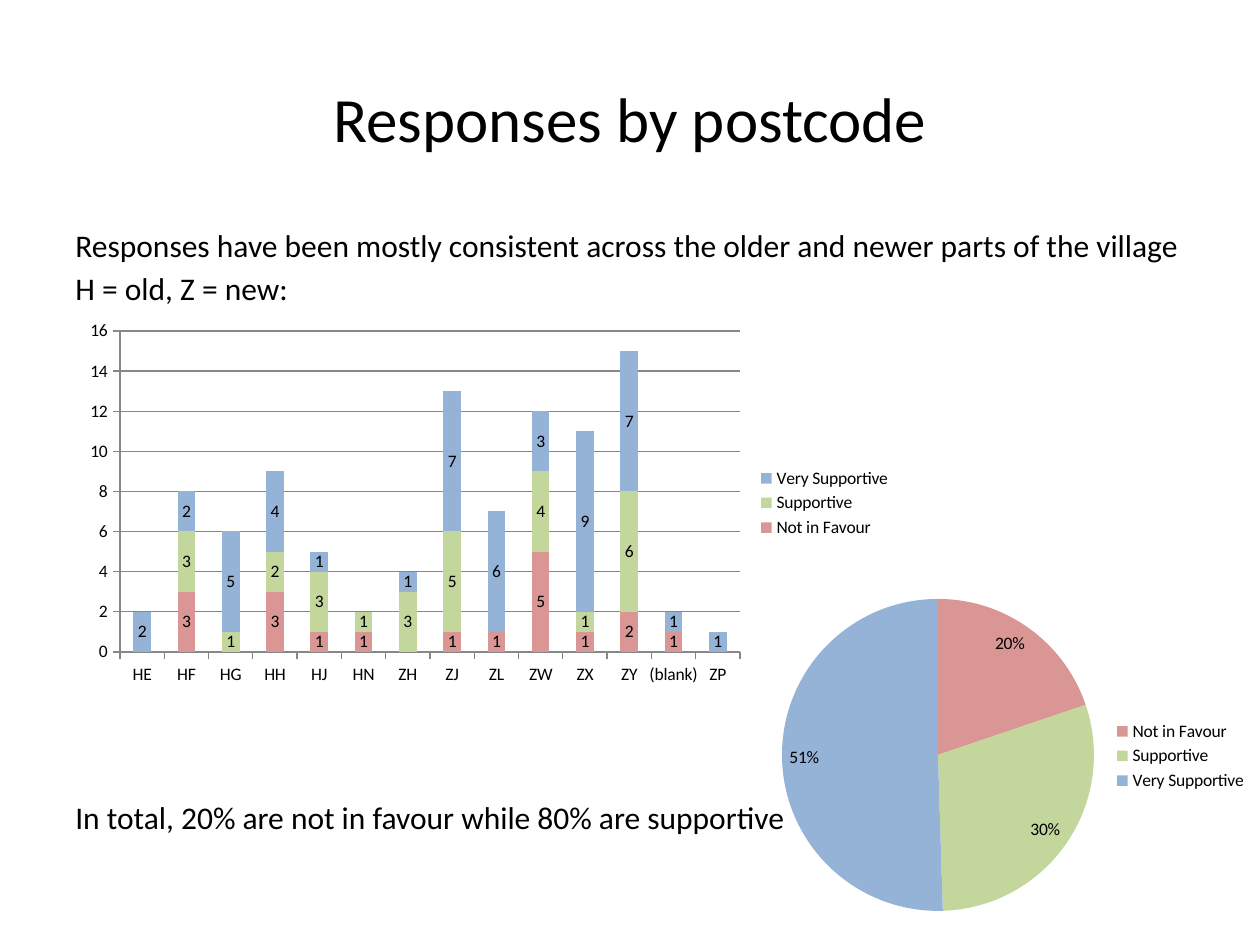
from dataclasses import dataclass

from lxml import etree
from pptx import Presentation, util as u
from pptx.chart.data import CategoryChartData
from pptx.dml.color import RGBColor
from pptx.enum import chart as ch, text
from pptx.oxml.ns import qn

EMU_PER_PX = 914400 / 126


@dataclass(frozen=True)
class Theme:
    font: str = "Calibri"
    ink: str = "000000"
    grid: str = "878787"
    against: str = "D99694"
    support: str = "C3D69B"
    strong: str = "95B3D7"
    title: int = 36
    body: int = 18
    chart: int = 10


@dataclass(frozen=True)
class Box:
    x: int
    y: int
    w: int
    h: int

    def emu(self) -> tuple:
        return tuple(px(v) for v in (self.x, self.y, self.w, self.h))


@dataclass(frozen=True)
class TextBlock:
    box: Box
    lines: tuple
    size: int
    align: text.PP_ALIGN = text.PP_ALIGN.LEFT
    anchor: text.MSO_ANCHOR = text.MSO_ANCHOR.TOP
    before: int = 3


@dataclass(frozen=True)
class Answer:
    name: str
    color: str
    counts: tuple
    percent: int


@dataclass(frozen=True)
class ChartSpec:
    kind: ch.XL_CHART_TYPE
    box: Box
    plot: Box


T = Theme()

TEXTS = (
    TextBlock(Box(63, 38, 1134, 158), ("Responses by postcode",), T.title,
              text.PP_ALIGN.CENTER, text.MSO_ANCHOR.MIDDLE, 0),
    TextBlock(Box(63, 220, 1134, 100),
              ("Responses have been mostly consistent across the older and newer parts of the village",
               "H = old, Z = new:"), T.body),
    TextBlock(Box(63, 792, 1134, 52),
              ("In total, 20% are not in favour while 80% are supportive",), T.body),
)

POSTCODES = ("HE", "HF", "HG", "HH", "HJ", "HN", "ZH", "ZJ", "ZL", "ZW", "ZX", "ZY",
             "(blank)", "ZP")
ANSWERS = (
    Answer("Not in Favour", T.against,
           (None, 3, None, 3, 1, 1, None, 1, 1, 5, 1, 2, 1, None), 20),
    Answer("Supportive", T.support,
           (None, 3, 1, 2, 3, 1, 3, 5, None, 4, 1, 6, None, None), 30),
    Answer("Very Supportive", T.strong,
           (2, 2, 5, 4, 1, None, 1, 7, 6, 3, 9, 7, 1, 1), 51),
)

COLUMNS = ChartSpec(ch.XL_CHART_TYPE.COLUMN_STACKED,
                    Box(74, 314, 830, 378), Box(120, 331, 620, 321))
PIE = ChartSpec(ch.XL_CHART_TYPE.PIE,
                Box(765, 567, 495, 378), Box(782, 599, 312, 312))


def px(n: int) -> int:
    return round(n * EMU_PER_PX)


def rgb(color: str) -> RGBColor:
    return RGBColor.from_string(color)


def paint(format, color: str) -> None:
    format.fill.solid()
    format.fill.fore_color.rgb = rgb(color)


def style_font(font, size: int) -> None:
    font.name = T.font
    font.size = u.Pt(size)
    font.color.rgb = rgb(T.ink)


def add_text(s, block: TextBlock) -> None:
    tf = s.shapes.add_textbox(*block.box.emu()).text_frame
    tf.word_wrap = True
    tf.vertical_anchor = block.anchor
    for i, line in enumerate(block.lines):
        p = tf.add_paragraph() if i else tf.paragraphs[0]
        p.text = line
        p.alignment = block.align
        p.space_before = u.Pt(block.before)
        style_font(p.font, block.size)


def place_plot(chart, box: Box, plot: Box) -> None:
    area = chart._chartSpace.find(".//" + qn("c:plotArea"))
    for old in area.findall(qn("c:layout")):
        area.remove(old)
    layout = etree.Element(qn("c:layout"))
    manual = etree.SubElement(layout, qn("c:manualLayout"))
    settings = {
        "layoutTarget": "inner", "xMode": "edge", "yMode": "edge",
        "x": (plot.x - box.x) / box.w, "y": (plot.y - box.y) / box.h,
        "w": plot.w / box.w, "h": plot.h / box.h,
    }
    for tag, value in settings.items():
        etree.SubElement(manual, qn("c:" + tag)).set("val", str(value))
    area.insert(0, layout)


def add_chart(s, spec: ChartSpec, data: CategoryChartData):
    chart = s.shapes.add_chart(spec.kind, *spec.box.emu(), data).chart
    chart.has_title = False
    chart.has_legend = True
    chart.legend.position = ch.XL_LEGEND_POSITION.RIGHT
    chart.legend.include_in_layout = False
    style_font(chart.font, T.chart)
    place_plot(chart, spec.box, spec.plot)
    return chart


def show_values(series, position: ch.XL_LABEL_POSITION, number_format: str) -> None:
    labels = series.data_labels
    labels.show_value = True
    labels.position = position
    labels.number_format = number_format
    labels.number_format_is_linked = False
    style_font(labels.font, T.chart)


def add_columns(s) -> None:
    data = CategoryChartData()
    data.categories = POSTCODES
    for answer in ANSWERS:
        data.add_series(answer.name, answer.counts)
    chart = add_chart(s, COLUMNS, data)
    plot = chart.plots[0]
    plot.gap_width = 150
    plot.overlap = 100
    plot.vary_by_categories = False
    for series, answer in zip(plot.series, ANSWERS):
        paint(series.format, answer.color)
        show_values(series, ch.XL_LABEL_POSITION.CENTER, "General")
    for axis in (chart.category_axis, chart.value_axis):
        axis.major_tick_mark = ch.XL_TICK_MARK.OUTSIDE
        axis.format.line.color.rgb = rgb(T.grid)
    axis = chart.value_axis
    axis.minimum_scale, axis.maximum_scale, axis.major_unit = 0, 16, 2
    axis.has_major_gridlines = True
    axis.major_gridlines.format.line.color.rgb = rgb(T.grid)


def add_pie(s) -> None:
    data = CategoryChartData()
    data.categories = [answer.name for answer in ANSWERS]
    data.add_series("Series 1", [answer.percent for answer in ANSWERS])
    plot = add_chart(s, PIE, data).plots[0]
    plot.vary_by_categories = True
    series = plot.series[0]
    for i, answer in enumerate(ANSWERS):
        paint(series.points[i].format, answer.color)
    show_values(series, ch.XL_LABEL_POSITION.INSIDE_END, '0"%"')


def main() -> None:
    prs = Presentation()
    prs.slide_width, prs.slide_height = px(1260), px(945)
    s = prs.slides.add_slide(prs.slide_layouts[6])
    for block in TEXTS:
        add_text(s, block)
    add_columns(s)
    add_pie(s)
    prs.save("out.pptx")


if __name__ == "__main__":
    main()
